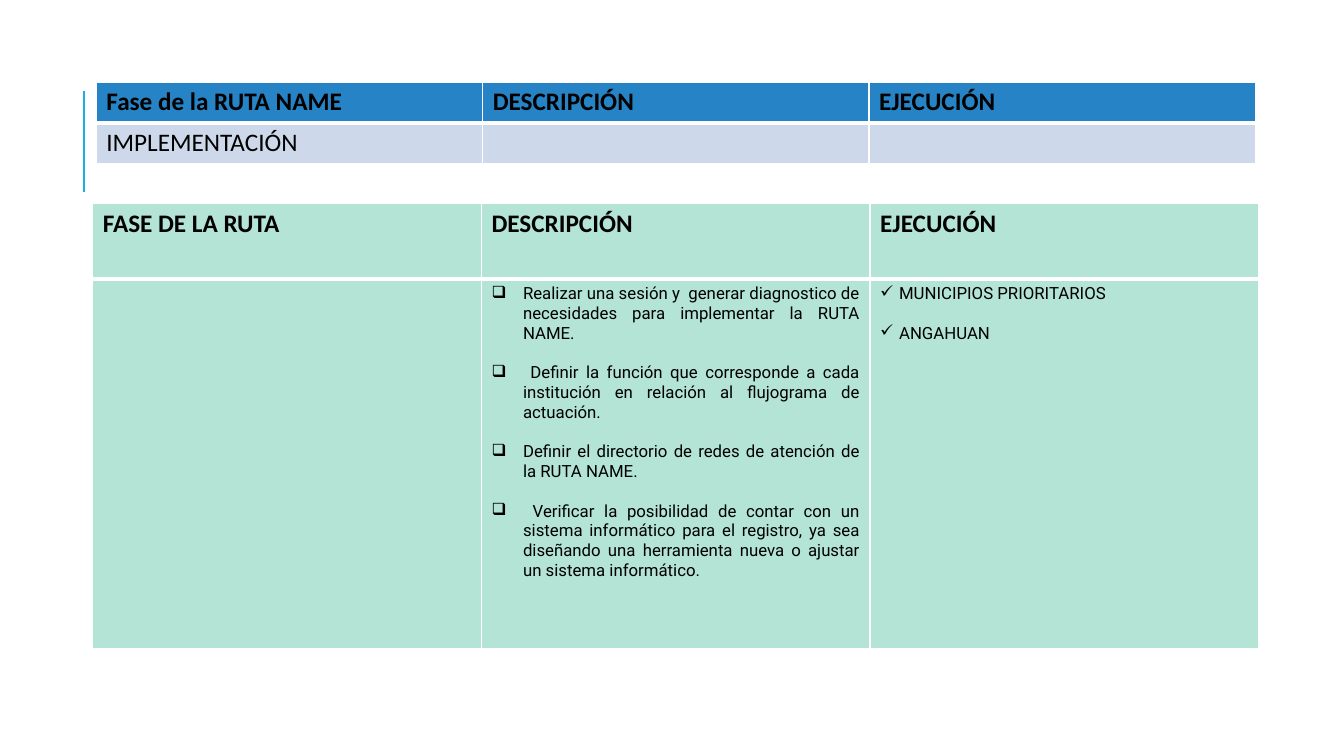
from pptx import Presentation
from pptx.dml.color import RGBColor
from pptx.enum.shapes import MSO_CONNECTOR
from pptx.enum.text import PP_ALIGN
from pptx.util import Pt
from pptx.oxml import parse_xml
from pptx.oxml.ns import nsdecls
from lxml.etree import SubElement

BLACK = RGBColor(0, 0, 0)
CYAN = RGBColor(0x1C, 0xAD, 0xE4)
BLUE = RGBColor(0x26, 0x83, 0xC6)
PALE = RGBColor(0xCD, 0xD9, 0xEA)
MINT = RGBColor(0xB3, 0xE4, 0xD6)


def add_run(para, text, font, size, bold=False):
    run = para.add_run()
    run.text = text
    run.font.name = font
    run.font.size = Pt(size)
    run.font.bold = bold
    run.font.color.rgb = BLACK


def add_list(cell, items, mark, indent, align):
    """Fill a cell with bulleted items, one blank line's height apart."""
    frame = cell.text_frame
    for i, item in enumerate(items):
        para = frame.add_paragraph() if i else frame.paragraphs[0]
        props = para._p.get_or_add_pPr()
        props.set("marL", str(Pt(indent)))
        props.set("indent", str(-Pt(indent)))
        bullet = SubElement(props, props.tag.replace("pPr", "buChar"))
        bullet.set("char", mark)
        para.alignment = align
        if i:
            para.space_before = Pt(14.2)
        add_run(para, item, "Roboto", 12)


deck = Presentation()
deck.slide_width, deck.slide_height = Pt(960), Pt(540)
slide = deck.slides.add_slide(deck.slide_layouts[6])

rule = slide.shapes.add_connector(
    MSO_CONNECTOR.STRAIGHT, Pt(60), Pt(136.8), Pt(60), Pt(64.8))
rule.line.color.rgb = CYAN
rule.line.width = Pt(1.5)
rule._element.spPr.append(parse_xml(f"<a:effectLst {nsdecls('a')}/>"))

# left, top, column width, row heights, row fills, row texts
plans = [
    (68.8, 58.5, 276, (29.2, 29.2), (BLUE, PALE),
     (("Fase de la RUTA NAME", "DESCRIPCIÓN", "EJECUCIÓN"),
      ("IMPLEMENTACIÓN", "", ""))),
    (66.3, 145.5, 277.6, (54, 263.5), (MINT, MINT),
     (("FASE DE LA RUTA", "DESCRIPCIÓN", "EJECUCIÓN"),
      ("", "", ""))),
]
for left, top, wide, highs, fills, texts in plans:
    grid = slide.shapes.add_table(
        2, 3, Pt(left), Pt(top), Pt(3 * wide), Pt(sum(highs))).table
    for col in grid.columns:
        col.width = Pt(wide)
    for r, row in enumerate(grid.rows):
        row.height = Pt(highs[r])
        for cell, text in zip(row.cells, texts[r]):
            props = cell._tc.get_or_add_tcPr()
            inner = "B" if r == 0 else "T"
            for side in "LRTB":
                width = Pt(3 if side == inner else 1)
                props.append(parse_xml(
                    f'<a:ln{side} {nsdecls("a")} w="{width}"><a:solidFill>'
                    f'<a:srgbClr val="FFFFFF"/></a:solidFill></a:ln{side}>'))
            cell.fill.solid()
            cell.fill.fore_color.rgb = fills[r]
            if text:
                add_run(cell.text_frame.paragraphs[0], text,
                        "Calibri", 18, r == 0)

tasks = [
    "Realizar una sesión y  generar diagnostico de necesidades para "
    "implementar la RUTA NAME.",
    " Definir la función que corresponde a cada institución en relación "
    "al flujograma de actuación.",
    "Definir el directorio de redes de atención de la RUTA NAME.",
    " Verificar la posibilidad de contar con un sistema informático para "
    "el registro, ya sea diseñando una herramienta nueva o ajustar un "
    "sistema informático.",
]
towns = ["MUNICIPIOS PRIORITARIOS", "ANGAHUAN"]
add_list(grid.cell(1, 1), tasks, "❑", 22.5, PP_ALIGN.JUSTIFY)
add_list(grid.cell(1, 2), towns, "✓", 13.5, PP_ALIGN.LEFT)

deck.save("out.pptx")
